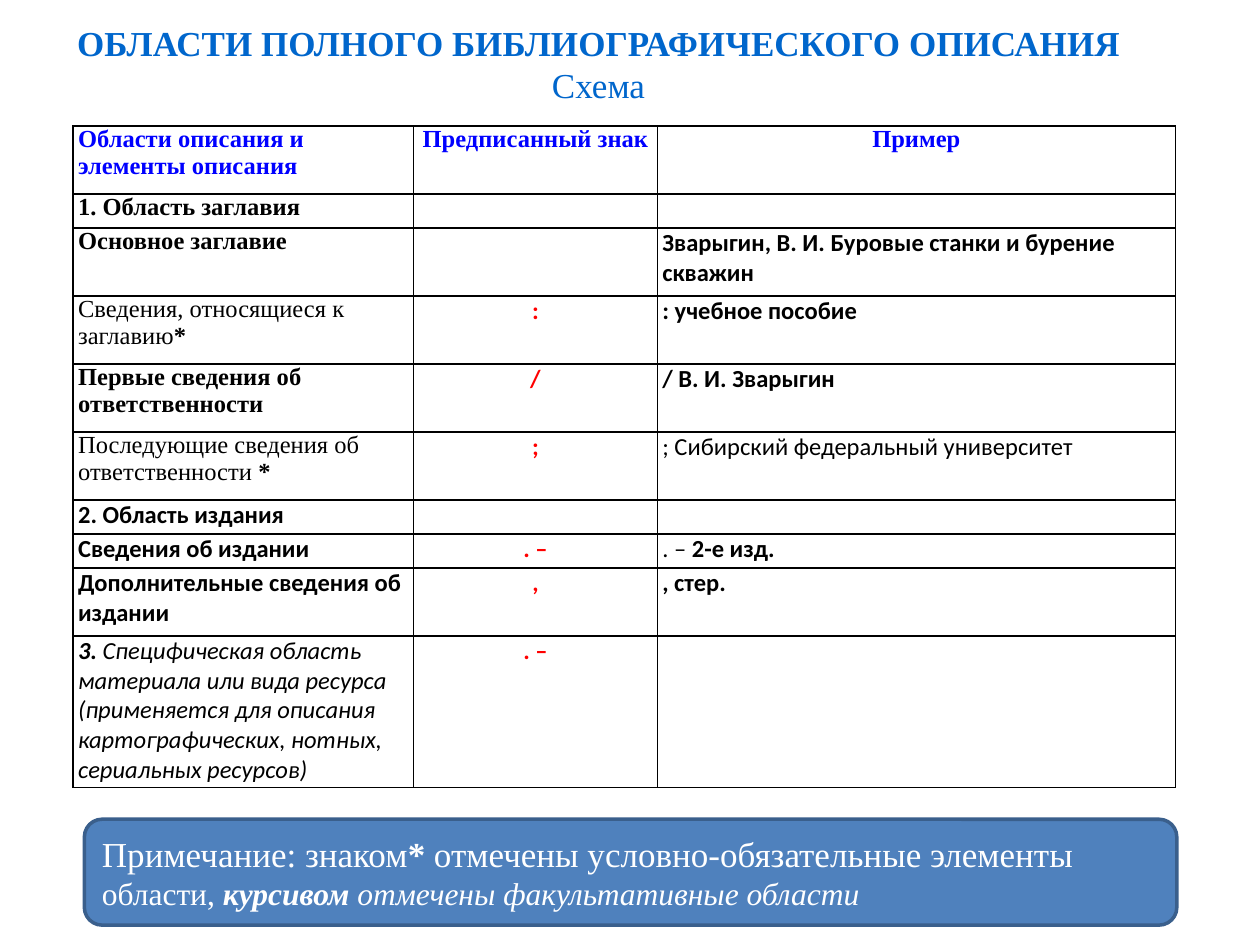
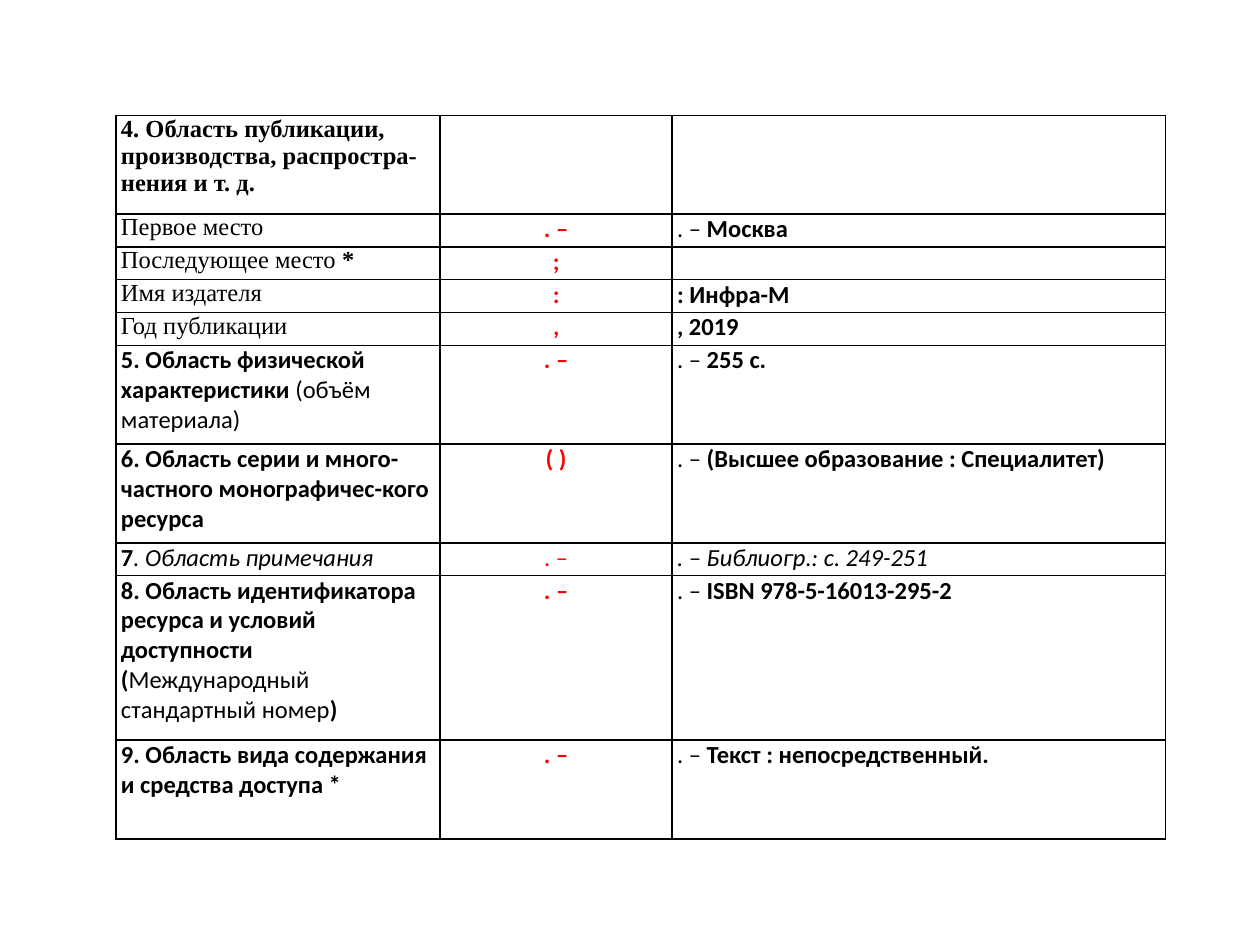
from dataclasses import dataclass

from lxml import etree
from pptx import Presentation
from pptx import util as u
from pptx.dml.color import RGBColor
from pptx.enum import shapes, text
from pptx.oxml import ns


@dataclass(frozen=True)
class Theme:
    serif: str = "Times New Roman"
    sans: str = "Calibri"
    title: str = "0066CC"
    header: str = "0000FF"
    sign: str = "FF0000"
    ink: str = "000000"
    white: str = "FFFFFF"
    note_fill: str = "4F81BD"
    note_line: str = "3A5F8C"
    large: int = 20
    medium: int = 18
    body: int = 14
    cell_inset: float = 0.04


THEME = Theme()
WIDTH, HEIGHT = u.Inches(10), u.Inches(7.5)
TITLE_ONLY, BLANK = 5, 6
COLUMN_SHARES = (0.309, 0.221, 0.47)

# Span styles: t = serif, b = bold, i = italic.
# A row is (spans of the element, sign, spans of the example).
PLAIN_DASH = (". – ", "")
DASH = ". –"

HEADER = ("Области описания и элементы описания", "Предписанный знак", "Пример")

TITLE_ROWS = [
    ([("1. Область заглавия", "tb")], "", []),
    ([("Основное заглавие", "tb")], "",
     [("Зварыгин, В. И. Буровые станки и бурение скважин", "b")]),
    ([("Сведения, относящиеся к заглавию", "t"), ("*", "tb")], ":",
     [(": учебное пособие", "b")]),
    ([("Первые сведения об ответственности", "tb")], "/",
     [("/ В. И. Зварыгин", "b")]),
    ([("Последующие сведения об ответственности ", "t"), ("*", "tb")], ";",
     [("; Сибирский федеральный университет", "")]),
    ([("2. Область издания", "b")], "", []),
    ([("Сведения об издании", "b")], DASH, [PLAIN_DASH, ("2-е изд.", "b")]),
    ([("Дополнительные сведения об издании", "b")], ",", [(", стер.", "b")]),
    ([("3. ", "bi"),
      ("Специфическая область материала или вида ресурса (применяется для "
       "описания картографических, нотных, сериальных ресурсов)", "i")], DASH, []),
]

PUBLICATION_ROWS = [
    ([("4. Область публикации, производства, распростра-нения и т. д.", "tb")], "", []),
    ([("Первое место", "t")], DASH, [PLAIN_DASH, ("Москва", "b")]),
    ([("Последующее место ", "t"), ("*", "tb")], ";", []),
    ([("Имя издателя", "t")], ":", [(": Инфра-М", "b")]),
    ([("Год публикации", "t")], ",", [(", 2019", "b")]),
    ([("5. Область физической характеристики ", "b"), ("(объём материала)", "")],
     DASH, [PLAIN_DASH, ("255 с.", "b")]),
    ([("6. Область серии и много-частного монографичес-кого ресурса", "b")],
     "( )", [PLAIN_DASH, ("(Высшее образование : Специалитет)", "b")]),
    ([("7", "b"), (". Область примечания", "i")], DASH,
     [(". – Библиогр.: с. 249-251", "i")]),
    ([("8. Область идентификатора ресурса и условий доступности (", "b"),
      ("Международный стандартный номер", ""), (")", "b")],
     DASH, [PLAIN_DASH, ("ISBN 978-5-16013-295-2", "b")]),
    ([("9. Область вида содержания и средства доступа *", "b")],
     DASH, [PLAIN_DASH, ("Текст : непосредственный.", "b")]),
]


def color(value):
    return RGBColor.from_string(value)


def place(left, top, width, height):
    """Turn shares of the slide into left, top, width and height."""
    return (round(left * WIDTH), round(top * HEIGHT),
            round(width * WIDTH), round(height * HEIGHT))


def format_span(span, style, ink, size):
    font = span.font
    font.name = THEME.serif if "t" in style else THEME.sans
    font.size = u.Pt(size)
    font.bold, font.italic = "b" in style, "i" in style
    font.color.rgb = color(ink)


def write_spans(para, spans, ink, size=THEME.body):
    """Each span is (words, style) or (words, style, own size)."""
    for words, style, *own_size in spans:
        span = para.add_run()
        span.text = words
        format_span(span, style, ink, own_size[0] if own_size else size)


def border_cell(cell):
    properties = cell._tc.get_or_add_tcPr()
    for side in ("lnL", "lnR", "lnT", "lnB"):
        line = etree.SubElement(properties, ns.qn(f"a:{side}"), w=str(u.Pt(1)))
        fill = etree.SubElement(line, ns.qn("a:solidFill"))
        etree.SubElement(fill, ns.qn("a:srgbClr"), val=THEME.ink)


def fill_cell(cell, spans, ink, centred):
    border_cell(cell)
    cell.fill.background()
    cell.margin_left = cell.margin_right = u.Inches(THEME.cell_inset)
    cell.margin_top = cell.margin_bottom = 0
    para = cell.text_frame.paragraphs[0]
    if centred:
        para.alignment = text.PP_ALIGN.CENTER
    write_spans(para, spans, ink)
    if not spans:  # keeps an empty cell from stretching its row
        etree.SubElement(para._p, ns.qn("a:endParaRPr"), sz=str(THEME.body * 100))


def add_description_table(slide, area, row_units, rows, header=None):
    """Row heights are in units of one text line."""
    frame = slide.shapes.add_table(len(row_units), len(COLUMN_SHARES), *area)
    table = frame.table
    table.first_row = table.horz_banding = False
    for column, share in zip(table.columns, COLUMN_SHARES):
        column.width = round(area[2] * share)
    for row, units in zip(table.rows, row_units):
        row.height = round(area[3] * units / sum(row_units))

    first = 0
    if header:
        first = 1
        for index, words in enumerate(header):
            fill_cell(table.cell(0, index), [(words, "tb")], THEME.header, index > 0)
    for index, (element, sign, example) in enumerate(rows, first):
        optional = element[-1][1] == "i" and example
        signs = [(sign, "" if optional else "b")] if sign else []
        fill_cell(table.cell(index, 0), element, THEME.ink, False)
        fill_cell(table.cell(index, 1), signs, THEME.sign, True)
        fill_cell(table.cell(index, 2), example, THEME.ink, False)


def set_title(slide, area, heading, subtitle):
    title = slide.shapes.title
    title.left, title.top, title.width, title.height = area
    frame = title.text_frame
    frame.text = f"{heading}\v{subtitle}"
    frame.vertical_anchor = text.MSO_ANCHOR.MIDDLE
    para = frame.paragraphs[0]
    para.alignment = text.PP_ALIGN.CENTER
    for span, style in zip(para.runs, ("tb", "t")):
        format_span(span, style, THEME.title, THEME.large)


def add_note(slide, area, spans):
    box = slide.shapes.add_shape(
        shapes.MSO_SHAPE.FLOWCHART_ALTERNATE_PROCESS, *area)
    box.shadow.inherit = False
    box.fill.solid()
    box.fill.fore_color.rgb = color(THEME.note_fill)
    box.line.color.rgb = color(THEME.note_line)
    box.line.width = u.Pt(2)
    frame = box.text_frame
    frame.word_wrap = True
    frame.vertical_anchor = text.MSO_ANCHOR.MIDDLE
    para = frame.paragraphs[0]
    para.alignment = text.PP_ALIGN.LEFT
    write_spans(para, spans, THEME.white, THEME.large)


def main():
    deck = Presentation()
    deck.slide_width, deck.slide_height = WIDTH, HEIGHT

    # Scheme: areas 1 to 3
    page = deck.slides.add_slide(deck.slide_layouts[TITLE_ONLY])
    set_title(page, place(0, 0, 0.95, 2 / 15),
              "ОБЛАСТИ ПОЛНОГО БИБЛИОГРАФИЧЕСКОГО ОПИСАНИЯ", "Схема")
    add_description_table(page, place(0.058, 2 / 15, 0.875, 0.7),
                          (2, 1, 2, 2, 2, 2, 1, 1, 2, 4.45), TITLE_ROWS, HEADER)
    add_note(page, place(0.067, 0.867, 0.867, 0.112), [
        ("Примечание: знаком", "t"),
        ("*", "tb"),
        (" отмечены условно-обязательные элементы ", "t"),
        ("области, ", "t", THEME.medium),
        ("курсивом ", "tbi", THEME.medium),
        ("отмечены факультативные области", "ti", THEME.medium),
    ])

    # Scheme continued: areas 4 to 9
    page = deck.slides.add_slide(deck.slide_layouts[BLANK])
    add_description_table(page, place(0.092, 0.122, 0.833, 0.766),
                          (3, 1, 1, 1, 1, 3, 3, 1, 5, 3), PUBLICATION_ROWS)

    deck.save("out.pptx")


if __name__ == "__main__":
    main()
